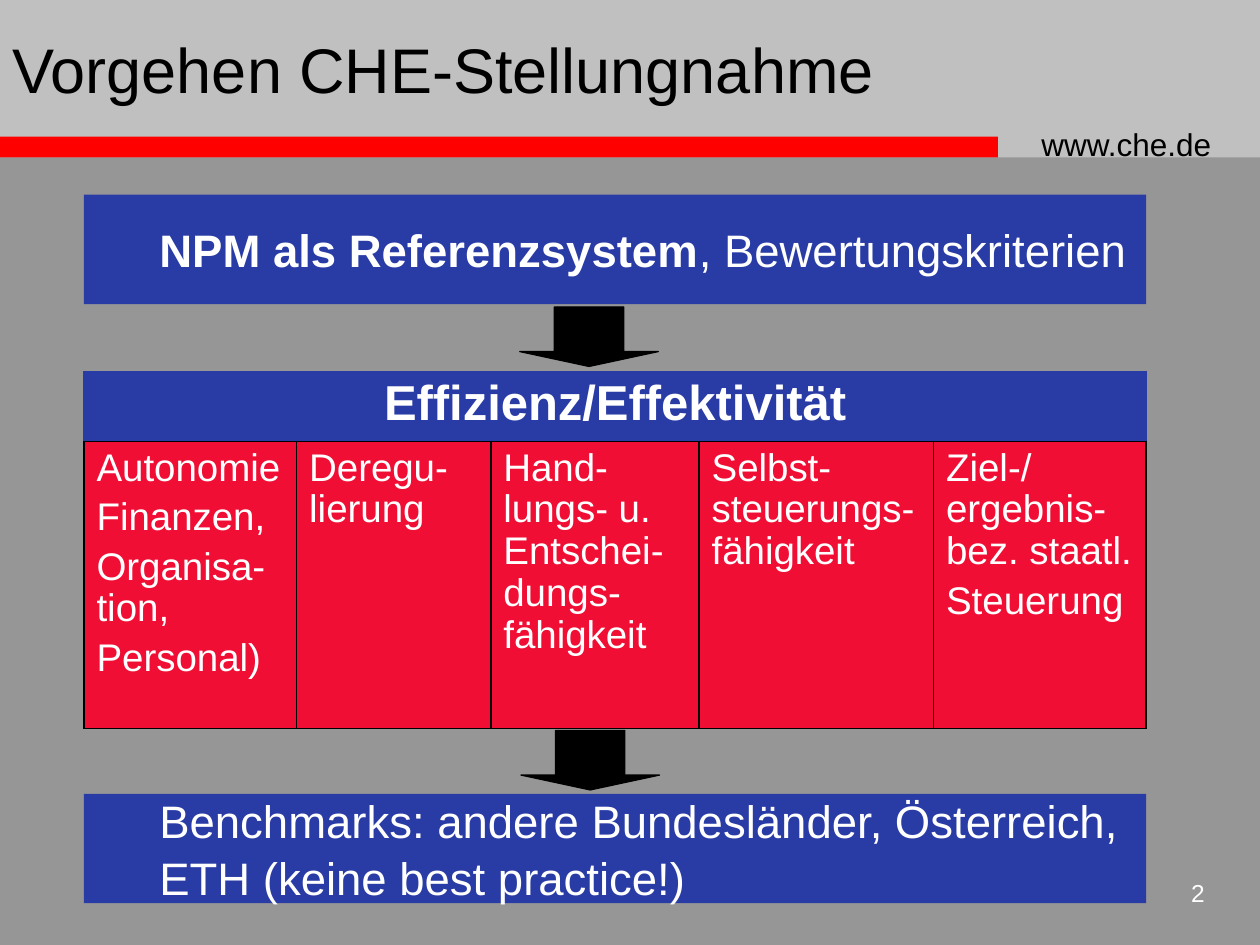
from lxml import etree
from pptx import Presentation
from pptx.dml.color import RGBColor
from pptx.enum.shapes import MSO_SHAPE
from pptx.enum.text import MSO_ANCHOR, PP_ALIGN
from pptx.oxml.ns import qn
from pptx.util import Pt

RECTANGLE, DOWN_ARROW = MSO_SHAPE.RECTANGLE, MSO_SHAPE.DOWN_ARROW
LEFT, CENTER, RIGHT = PP_ALIGN.LEFT, PP_ALIGN.CENTER, PP_ALIGN.RIGHT
TOP, MIDDLE = MSO_ANCHOR.TOP, MSO_ANCHOR.MIDDLE

BLACK = RGBColor(0x00, 0x00, 0x00)
WHITE = RGBColor(0xFF, 0xFF, 0xFF)
GREY = RGBColor(0x96, 0x96, 0x96)
SILVER = RGBColor(0xC0, 0xC0, 0xC0)
BRIGHT_RED = RGBColor(0xFF, 0x00, 0x00)
CRIMSON = RGBColor(0xF0, 0x0E, 0x34)
BLUE = RGBColor(0x29, 0x3B, 0xA5)

BLOCK_LEFT, BLOCK_WIDTH, BLOCK_HEIGHT = 48, 607, 62.6
COLUMN_WIDTHS = [121.5, 111, 119, 134, 121.5]
ROW_HEIGHTS = [38.4, 164]
HEADING = "Effizienz/Effektivität"
CRITERIA = [
    ["Autonomie", "Finanzen,", "Organisa-tion,", "Personal)"],
    ["Deregu-lierung"],
    ["Hand-lungs- u. Entschei-dungs-fähigkeit"],
    ["Selbst-steuerungs-fähigkeit"],
    ["Ziel-/ ergebnis-bez. staatl.", "Steuerung"],
]


class SlideBuilder:
    def __init__(self, slide, font_name="Arial"):
        self.slide = slide
        self.font_name = font_name

    def style_run(self, run, size, color, bold=False):
        run.font.name = self.font_name
        run.font.size = Pt(size)
        run.font.bold = bold
        run.font.color.rgb = color

    def set_lines(self, text_frame, lines, size, color, align=LEFT, bold=False,
                  gap=0, indent=0, line_spacing=None):
        text_frame.word_wrap = True
        text_frame.text = "\n".join(lines)
        for index, paragraph in enumerate(text_frame.paragraphs):
            paragraph.alignment = align
            if line_spacing:
                paragraph.line_spacing = line_spacing
            if index and gap:
                paragraph.space_before = Pt(gap)
            if indent:
                properties = paragraph._p.get_or_add_pPr()
                properties.set("marL", str(Pt(indent)))
                properties.set("indent", "0")
            for run in paragraph.runs:
                self.style_run(run, size, color, bold)

    def text(self, left, top, width, height, line, size, color,
             align=LEFT, anchor=TOP):
        box = self.slide.shapes.add_textbox(Pt(left), Pt(top), Pt(width), Pt(height))
        box.text_frame.vertical_anchor = anchor
        self.set_lines(box.text_frame, [line], size, color, align)

    def shape(self, kind, left, top, width, height, color):
        shape = self.slide.shapes.add_shape(
            kind, Pt(left), Pt(top), Pt(width), Pt(height))
        shape.shadow.inherit = False
        shape.fill.solid()
        shape.fill.fore_color.rgb = color
        shape.line.fill.background()
        return shape

    def block(self, top, lines):
        shape = self.shape(RECTANGLE, BLOCK_LEFT, top, BLOCK_WIDTH, BLOCK_HEIGHT, BLUE)
        shape.text_frame.vertical_anchor = MIDDLE
        self.set_lines(shape.text_frame, lines, 26, WHITE, gap=1.5, indent=36)
        return shape.text_frame

    def arrow(self, left, top):
        arrow = self.shape(DOWN_ARROW, left, top, 79.2, 34, BLACK)
        arrow.adjustments[0], arrow.adjustments[1] = 0.5, 0.25
        arrow.line.color.rgb = BLACK
        arrow.line.width = Pt(0.75)

    def cell(self, cell, lines, size, fill, align=LEFT, bold=False, edge=BLACK):
        """Fill a cell with text and colour; edge colours all borders but the bottom."""
        self.set_lines(cell.text_frame, lines, size, WHITE, align, bold,
                       gap=4.4, line_spacing=0.97)
        properties = cell._tc.get_or_add_tcPr()
        for side, color in (("L", edge), ("R", edge), ("T", edge), ("B", BLACK)):
            line = etree.SubElement(properties, qn(f"a:ln{side}"), w=str(Pt(1)))
            solid = etree.SubElement(line, qn("a:solidFill"))
            etree.SubElement(solid, qn("a:srgbClr"), val=str(color))
        cell.fill.solid()
        cell.fill.fore_color.rgb = fill

    def criteria_table(self, top):
        frame = self.slide.shapes.add_table(
            2, len(COLUMN_WIDTHS), Pt(BLOCK_LEFT), Pt(top),
            Pt(BLOCK_WIDTH), Pt(sum(ROW_HEIGHTS)))
        table = frame.table
        for column, width in zip(table.columns, COLUMN_WIDTHS):
            column.width = Pt(width)
        for row, height in zip(table.rows, ROW_HEIGHTS):
            row.height = Pt(height)
        for index, lines in enumerate(CRITERIA):
            heading = [] if index else [HEADING]
            self.cell(table.cell(0, index), heading, 28, BLUE, CENTER, True, BLUE)
            self.cell(table.cell(1, index), lines, 22, CRIMSON)
        table.cell(0, 0).merge(table.cell(0, len(CRITERIA) - 1))


def main():
    presentation = Presentation()
    presentation.slide_width, presentation.slide_height = Pt(720), Pt(540)
    slide = presentation.slides.add_slide(presentation.slide_layouts[6])
    slide.background.fill.solid()
    slide.background.fill.fore_color.rgb = GREY
    builder = SlideBuilder(slide)

    builder.shape(RECTANGLE, 0, 0, 720, 90, SILVER)
    builder.shape(RECTANGLE, -0.7, 78, 571, 12, BRIGHT_RED)
    builder.text(588, 67.7, 126, 29, "www.che.de", 18, BLACK)
    builder.text(654, 498, 41.5, 30, "2", 14, WHITE, RIGHT)
    builder.text(0, 0, 582, 78, "Vorgehen CHE-Stellungnahme", 36, BLACK, anchor=MIDDLE)

    reference = builder.block(111.3, ["NPM als Referenzsystem"]).paragraphs[0]
    reference.runs[0].font.bold = True
    addition = reference.add_run()
    addition.text = ", Bewertungskriterien"
    builder.style_run(addition, 26, WHITE)

    builder.criteria_table(212.4)
    builder.block(453.6, ["Benchmarks: andere Bundesländer, Österreich,",
                          "ETH (keine best practice!)"])
    builder.arrow(297, 175.4)
    builder.arrow(297.7, 417.4)
    presentation.save("out.pptx")


if __name__ == "__main__":
    main()
